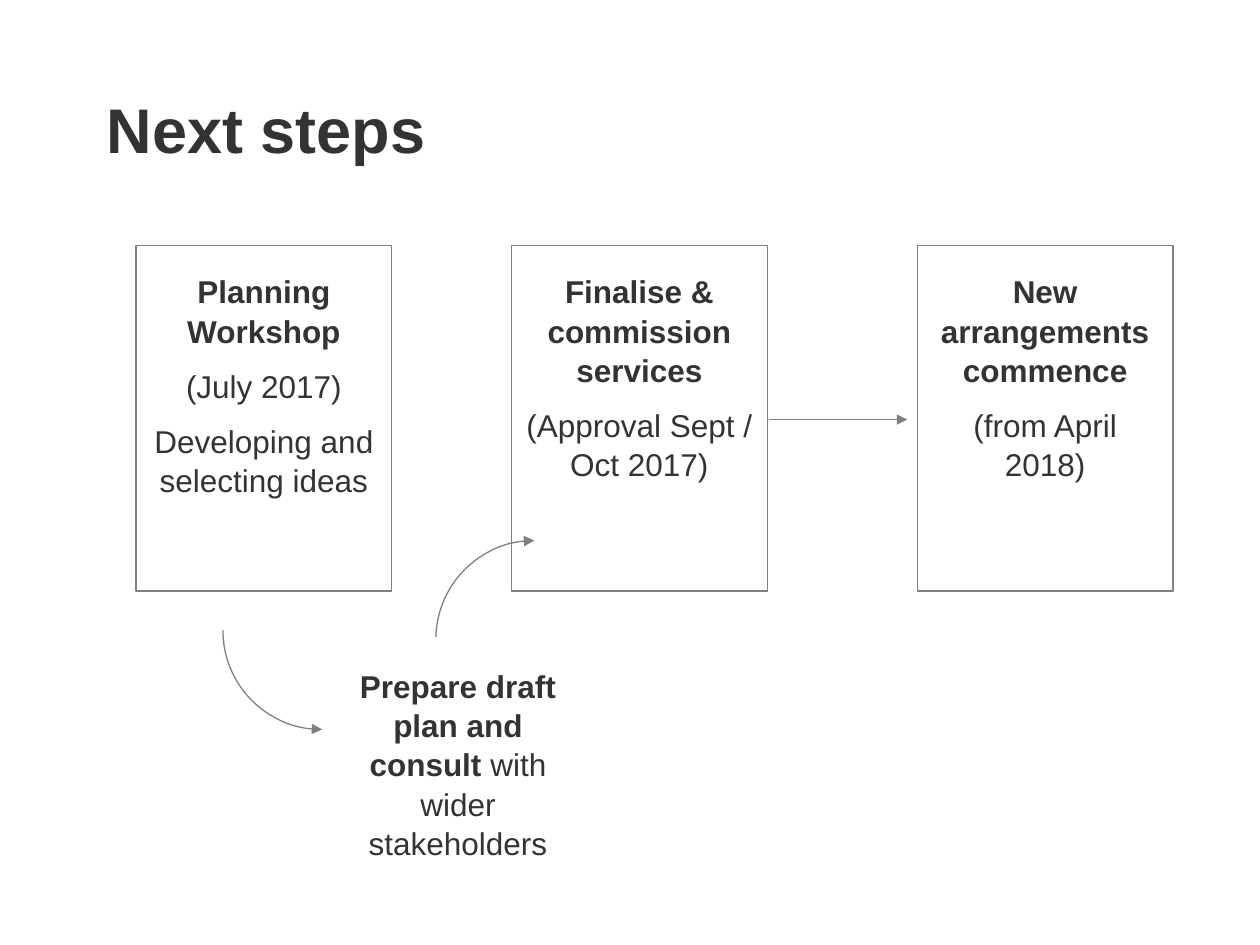
from lxml import etree
from pptx import Presentation
from pptx.dml.color import RGBColor
from pptx.enum import shapes, text
from pptx.oxml import ns
from pptx.util import Inches, Pt

INK = RGBColor(0x33, 0x33, 0x33)
GREY = RGBColor(0x80, 0x80, 0x80)


def write(frame, paragraphs, size, align, top):
    frame.word_wrap = True
    frame.vertical_anchor = text.MSO_ANCHOR.TOP
    frame.margin_top = Inches(top)
    for i, runs in enumerate(paragraphs):
        paragraph = frame.paragraphs[0] if i == 0 else frame.add_paragraph()
        paragraph.alignment = align
        if align == text.PP_ALIGN.CENTER:
            paragraph.line_spacing = 1.04
            paragraph.space_before = Pt(9 if i else 0)
        for words, bold in runs:
            run = paragraph.add_run()
            run.text = words
            run.font.name = "Arial"
            run.font.size = Pt(size)
            run.font.bold = bold
            run.font.color.rgb = INK


def outline(item, arrow_end=None):
    item.line.color.rgb = GREY
    item.line.width = Pt(0.75)
    if arrow_end:
        end = etree.SubElement(item.line._get_or_add_ln(), ns.qn(f"a:{arrow_end}"))
        end.set("type", "triangle")


deck = Presentation()
deck.slide_width, deck.slide_height = Inches(10), Inches(7.5)
slide = deck.slides.add_slide(deck.slide_layouts[6])

title = slide.shapes.add_textbox(Inches(0.75), Inches(0.67), Inches(8.92), Inches(1.25))
write(title.text_frame, [[("Next steps", True)]], 36, text.PP_ALIGN.LEFT, 0.05)

steps = [
    (1.08, ["Planning Workshop", "(July 2017)", "Developing and selecting ideas"]),
    (4.06, ["Finalise & commission services", "(Approval Sept / Oct 2017)"]),
    (7.28, ["New arrangements commence", "(from April 2018)"]),
]
for left, (heading, *details) in steps:
    step = slide.shapes.add_shape(
        shapes.MSO_SHAPE.RECTANGLE, Inches(left), Inches(1.95), Inches(2.03), Inches(2.74))
    step.shadow.inherit = False
    step.fill.background()
    outline(step)
    paragraphs = [[(heading, True)]] + [[(detail, False)] for detail in details]
    write(step.text_frame, paragraphs, 18, text.PP_ALIGN.CENTER, 0.2)

consultation = slide.shapes.add_textbox(Inches(2.73), Inches(5.06), Inches(1.81), Inches(1.64))
write(consultation.text_frame,
      [[("Prepare draft plan and consult ", True), ("with wider stakeholders", False)]],
      18, text.PP_ALIGN.CENTER, 0.22)

curves = [
    (1.77, 4.22, 53.88, 108.1, "headEnd"),
    (3.46, 4.29, 108.83, 161.84, "tailEnd"),
]
for left, top, start, stop, arrow_end in curves:
    curve = slide.shapes.add_shape(
        shapes.MSO_SHAPE.ARC, Inches(left), Inches(top), Inches(1.57), Inches(1.57))
    curve.adjustments[0] = start
    curve.adjustments[1] = stop
    curve.shadow.inherit = False
    curve.fill.background()
    outline(curve, arrow_end)

handover = slide.shapes.add_connector(
    shapes.MSO_CONNECTOR.STRAIGHT, Inches(6.1), Inches(3.33), Inches(7.2), Inches(3.33))
outline(handover, "tailEnd")
etree.SubElement(handover._element.spPr, ns.qn("a:effectLst"))

deck.save("out.pptx")
